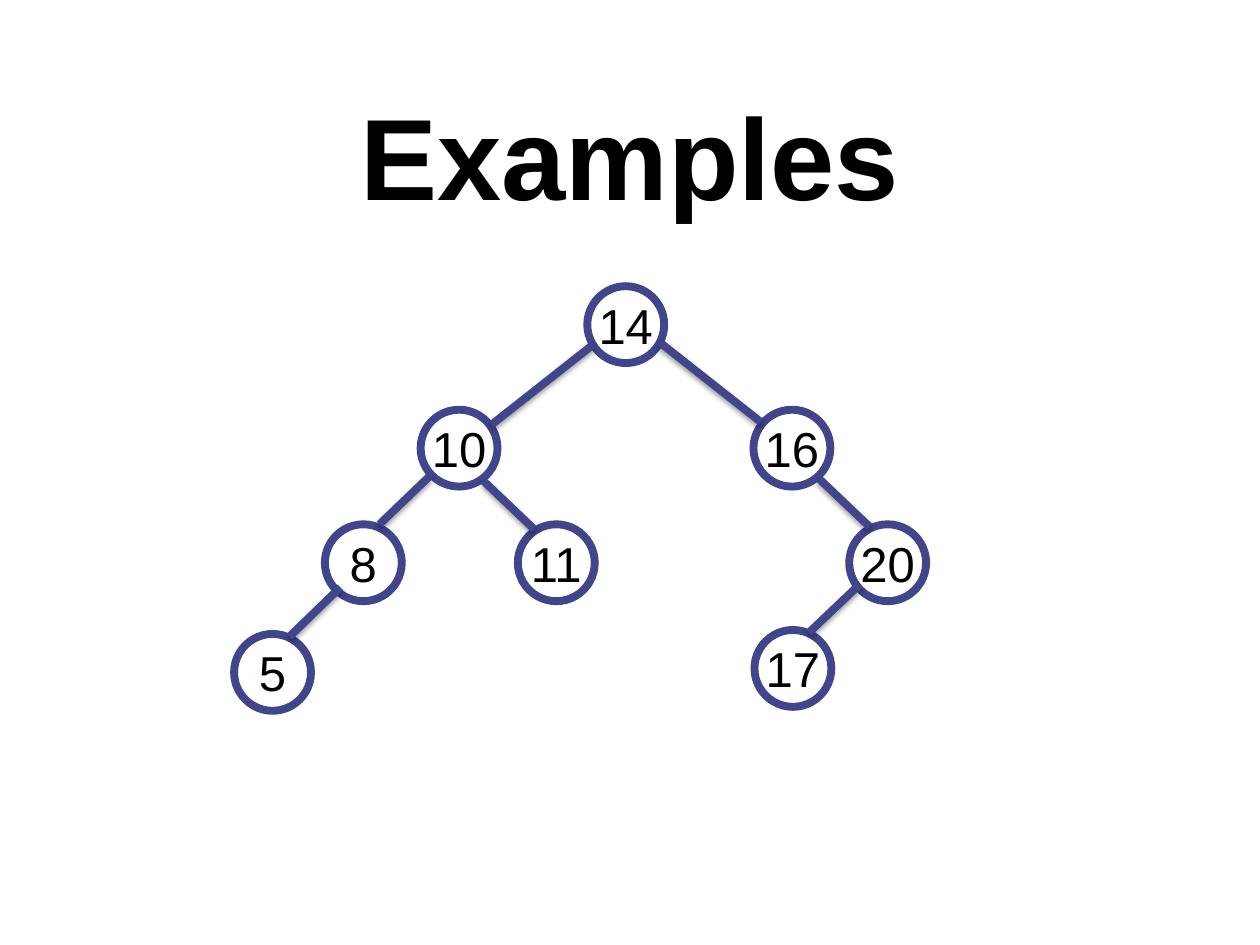
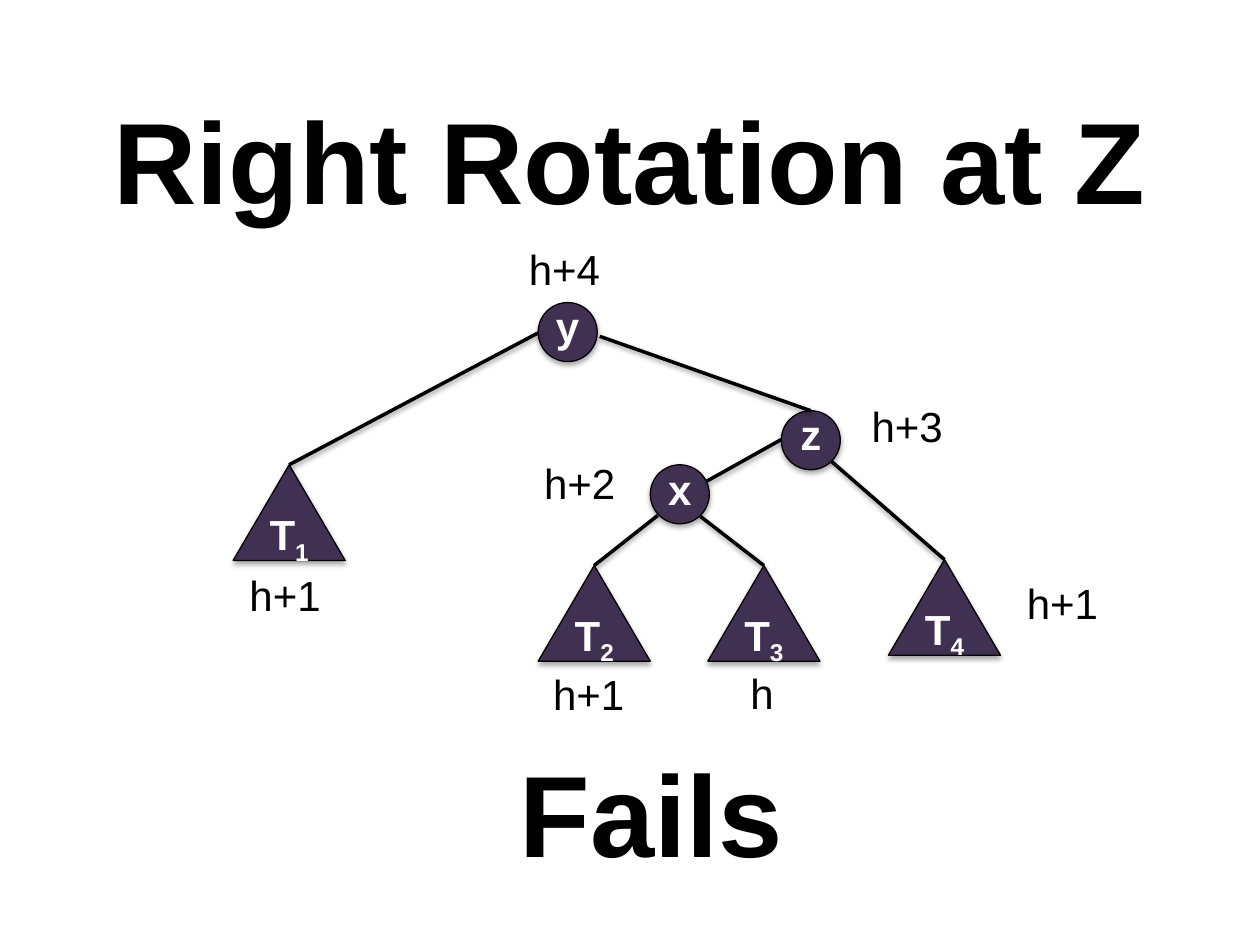
from lxml.etree import SubElement
from pptx import Presentation
from pptx.dml.color import RGBColor
from pptx.enum.shapes import MSO_CONNECTOR as Link, MSO_SHAPE as Shape
from pptx.enum.text import MSO_ANCHOR as Anchor, MSO_AUTO_SIZE as Fit, PP_ALIGN as Align
from pptx.oxml.ns import qn
from pptx.util import Cm, Pt

COLOURS = {"ink": "000000", "ring": "40458C", "plum": "403152", "white": "FFFFFF"}
HEADING = {"size": 66, "bold": True, "anchor": Anchor.MIDDLE, "wrap": True}
HEADING_SIZE = (Cm(22.86), Cm(3.18))


def write(frame, text, size=24, colour="ink", bold=False, align=Align.CENTER,
          anchor=Anchor.TOP, wrap=False, subscript=""):
    frame.word_wrap = wrap
    frame.auto_size = Fit.NONE
    frame.vertical_anchor = anchor
    paragraph = frame.paragraphs[0]
    paragraph.alignment = align
    for part in filter(None, (text, subscript)):
        run = paragraph.add_run()
        run.text = part
        run.font.name = "Arial"
        run.font.size = Pt(size)
        run.font.bold = bold
        run.font.color.rgb = RGBColor.from_string(COLOURS[colour])
    if subscript:
        run.font._element.set("baseline", "-25000")


def add_shadow(item, opacity, distance):
    effects = SubElement(item._element.spPr, qn("a:effectLst"))
    shadow = SubElement(effects, qn("a:outerShdw"), blurRad=str(Pt(3.1)),
                        dist=str(Pt(distance)), dir="5400000", rotWithShape="0")
    black = SubElement(shadow, qn("a:srgbClr"), val=COLOURS["ink"])
    SubElement(black, qn("a:alpha"), val=str(opacity * 1000))


deck = Presentation()
deck.slide_width, deck.slide_height = Cm(25.4), Cm(19.05)

# Slides and their titles
slides = []
for heading, top in (("Examples", 1.52), ("Right Rotation at Z", 1.6)):
    slide = deck.slides.add_slide(deck.slide_layouts[5])
    title = slide.shapes.title
    title.left, title.top = Cm(1.27), Cm(top)
    title.width, title.height = HEADING_SIZE
    write(title.text_frame, heading, **HEADING)
    slides.append(slide)
examples, rotation = slides

# Examples: numbered nodes, level by level
levels = [
    (5.77, {"14": 11.84}),
    (8.26, {"10": 8.48, "16": 15.19}),
    (10.57, {"8": 6.55, "11": 10.44, "20": 17.12}),
    (12.78, {"5": 4.72}),
    (12.7, {"17": 15.21}),
]
for top, keys in levels:
    for key, left in keys.items():
        node = examples.shapes.add_shape(Shape.OVAL, Cm(left), Cm(top), Cm(1.55), Cm(1.55))
        node.shadow.inherit = False
        node.fill.background()
        node.line.color.rgb = RGBColor.from_string(COLOURS["ring"])
        node.line.width = Pt(4.5)
        write(node.text_frame, key, size=28, anchor=Anchor.MIDDLE)

# Rotation: named nodes and subtrees, each with a label set off from its top
# kind: shape, width, height, label width, label offset
circle = (Shape.OVAL, 1.19, 1.19, 0.97, -0.16)
subtree = (Shape.ISOSCELES_TRIANGLE, 2.26, 1.93, 1.32, 0.76)
members = {
    "y": (circle, 10.85, 6.1),
    "z": (circle, 15.75, 8.28),
    "x": (circle, 13.11, 9.37),
    "T1": (subtree, 4.7, 9.37),
    "T2": (subtree, 10.85, 11.4),
    "T3": (subtree, 14.27, 11.4),
    "T4": (subtree, 17.91, 11.28),
}
tree = {}
for name, (kind, left, top) in members.items():
    outline, width, height, label_width, offset = kind
    member = rotation.shapes.add_shape(outline, Cm(left), Cm(top), Cm(width), Cm(height))
    member.fill.solid()
    member.fill.fore_color.rgb = RGBColor.from_string(COLOURS["plum"])
    member.line.color.rgb = RGBColor.from_string(COLOURS["ink"])
    member.line.width = Pt(0.75)
    add_shadow(member, 35, 1.8)
    tree[name] = member
    label = rotation.shapes.add_textbox(Cm(left + (width - label_width) / 2), Cm(top + offset),
                                        Cm(label_width), Cm(1.27))
    write(label.text_frame, name[0], colour="white", bold=True, subscript=name[1:])

# Rotation: subtree heights
heights = [
    ("h+4", 10.41, 4.78), ("h+3", 17.32, 7.95), ("h+2", 10.72, 9.09),
    ("h+1", 4.78, 11.35), ("h+1", 10.9, 13.36), ("h", 14.88, 13.34),
    ("h+1", 20.45, 11.51),
]
for text, left, top in heights:
    height_note = rotation.shapes.add_textbox(Cm(left), Cm(top),
                                              Cm(2.03 if "+" in text else 0.99), Cm(1.27))
    write(height_note.text_frame, text, align=Align.LEFT)

# Branches: a start, then an end point or the member whose top is reached
example_branches = [
    ((11.94, 6.96), (9.91, 8.56)),
    ((13.31, 6.91), (15.34, 8.51)),
    ((8.66, 9.6), (7.65, 10.57)),
    ((9.75, 9.7), (10.77, 10.67)),
    ((16.51, 9.65), (17.53, 10.62)),
    ((6.86, 11.84), (5.84, 12.83)),
    ((17.32, 11.79), (16.31, 12.75)),
]
rotation_branches = [
    ((10.85, 6.71), "T1"),
    ((12.09, 6.78), "z"),
    ((15.75, 8.86), (14.25, 9.7)),
    ((16.76, 9.3), "T4"),
    ((13.26, 10.39), "T2"),
    ((14.12, 10.41), "T3"),
]
for slide, branches, colour, weight in ((examples, example_branches, "ring", 4.5),
                                        (rotation, rotation_branches, "ink", 2)):
    for start, end in branches:
        finish = start if end in tree else end
        branch = slide.shapes.add_connector(Link.STRAIGHT, *map(Cm, start + finish))
        if end in tree:
            branch.end_connect(tree[end], 0)
        branch.line.color.rgb = RGBColor.from_string(COLOURS[colour])
        branch.line.width = Pt(weight)
        add_shadow(branch, 38, 1.6)

# Rotation: verdict
verdict = rotation.shapes.add_textbox(Cm(1.7), Cm(14.76), *HEADING_SIZE)
write(verdict.text_frame, "Fails", **HEADING)

deck.save("out.pptx")
